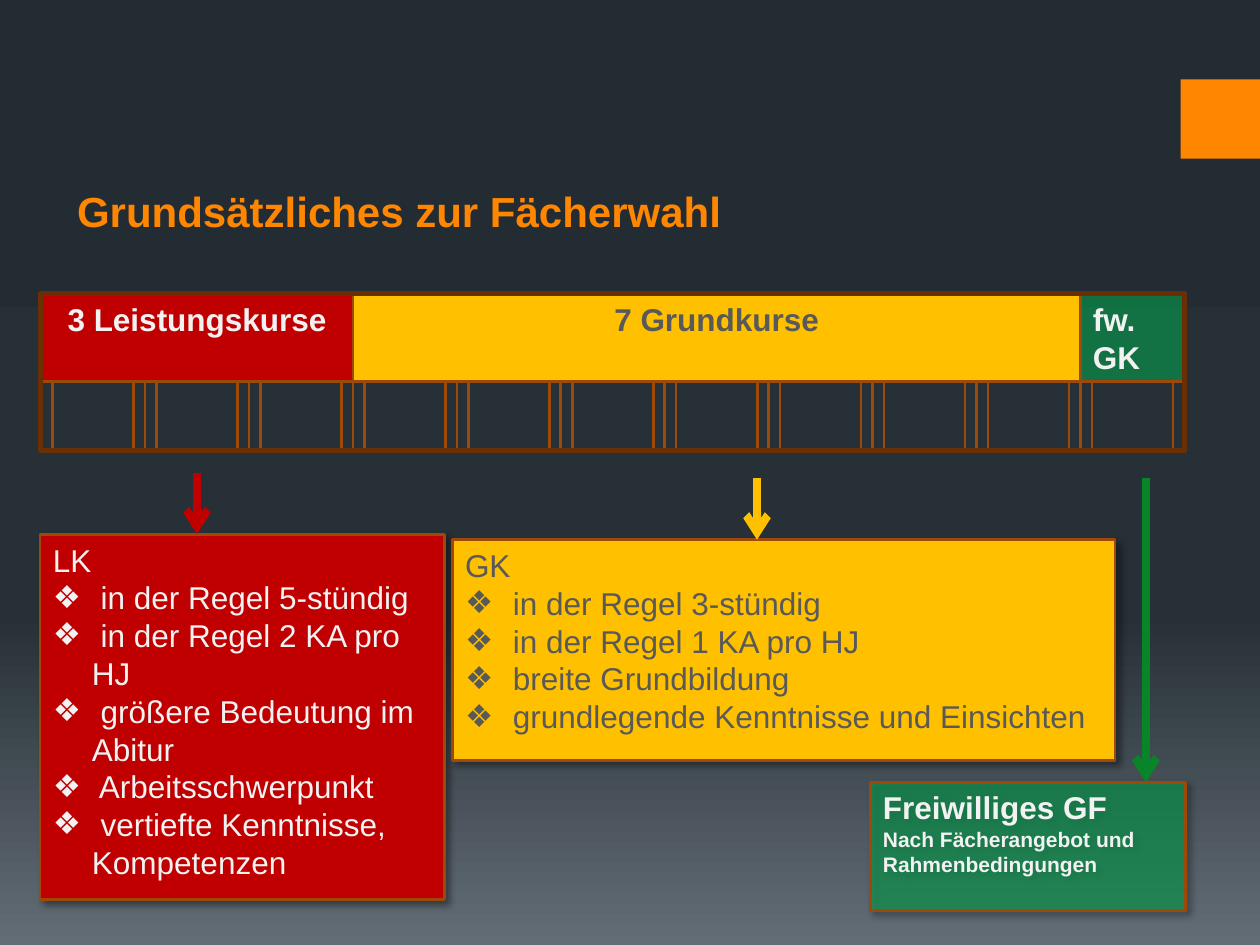
"""Build the slide on the basic rules of choosing school subjects."""
from copy import deepcopy
from dataclasses import dataclass

from lxml import etree
from pptx import Presentation
from pptx.dml.color import RGBColor
from pptx.enum.shapes import MSO_CONNECTOR, MSO_SHAPE
from pptx.enum.text import MSO_ANCHOR, MSO_AUTO_SIZE, PP_ALIGN
from pptx.oxml.ns import qn
from pptx.util import Cm, Pt

RECTANGLE = MSO_SHAPE.RECTANGLE
STRAIGHT = MSO_CONNECTOR.STRAIGHT
LEFT, CENTER = PP_ALIGN.LEFT, PP_ALIGN.CENTER
TOP, NO_AUTOFIT = MSO_ANCHOR.TOP, MSO_AUTO_SIZE.NONE

COLORS = {
    "accent": "FF8600", "border": "9D4909", "frame": "693006",
    "red": "C00000", "yellow": "FFC000", "green": "00B050",
    "green_arrow": "098529", "light": "F2F2F2", "dark": "595959",
}
BACKGROUND_STOPS = ((0, "242C33"), (0.65, "273037"), (1, "636D76"))
FONT = "Arial"
BULLET_INDENT = Cm(0.79)

GRID_LEFT, GRID_TOP = 0.83, 5.92
COLUMN_WIDTH, COLUMN_COUNT = 2.095, 11
HEADER_HEIGHT, CELL_HEIGHT, CELL_INSET = 1.77, 1.4, 0.23


@dataclass
class Box:
    left: float
    top: float
    width: float
    height: float


@dataclass
class Line:
    text: str
    size: float = 18
    bold: bool = False
    bullet: bool = False


@dataclass
class Band:
    label: str
    columns: int
    fill: str
    text_color: str
    alignment: PP_ALIGN = CENTER
    opacity: int = 100


@dataclass
class CourseList:
    box: Box
    fill: str
    text_color: str
    heading: str
    points: tuple


@dataclass
class Arrow:
    x: float
    top: float
    bottom: float
    color: str


BANDS = (
    Band("3 Leistungskurse", 3, "red", "light"),
    Band("7 Grundkurse", 7, "yellow", "dark"),
    Band("fw. GK", 1, "green", "light", LEFT, 52),
)
COURSE_LISTS = (
    CourseList(Box(0.81, 10.77, 8.15, 7.37), "red", "light", "LK", (
        " in der Regel 5-stündig", " in der Regel 2 KA pro HJ",
        " größere Bedeutung im Abitur", " Arbeitsschwerpunkt",
        " vertiefte Kenntnisse, Kompetenzen")),
    CourseList(Box(9.12, 10.88, 13.36, 4.45), "yellow", "dark", "GK", (
        " in der Regel 3-stündig", " in der Regel 1 KA pro HJ",
        " breite Grundbildung", " grundlegende Kenntnisse und Einsichten")),
)
ARROWS = (
    Arrow(3.97, 9.53, 10.77, "red"),
    Arrow(15.26, 9.63, 10.88, "yellow"),
    Arrow(23.1, 9.63, 15.77, "green_arrow"),
)


def rgb(name: str) -> RGBColor:
    return RGBColor.from_string(COLORS[name])


def place(shape, box: Box) -> None:
    shape.left, shape.top = Cm(box.left), Cm(box.top)
    shape.width, shape.height = Cm(box.width), Cm(box.height)


def style(shape, fill=None, border=None, border_width=1.5, opacity=100) -> None:
    if fill:
        shape.fill.solid()
        shape.fill.fore_color.rgb = rgb(fill)
        if opacity < 100:
            color = shape.element.spPr.find(".//" + qn("a:srgbClr"))
            etree.SubElement(color, qn("a:alpha"), val=str(opacity * 1000))
    else:
        shape.fill.background()
    if border:
        shape.line.color.rgb = rgb(border)
        shape.line.width = Pt(border_width)
    else:
        shape.line.fill.background()
    shape.shadow.inherit = False


def add_rectangle(slide, box: Box, **look):
    shape = slide.shapes.add_shape(
        RECTANGLE, Cm(box.left), Cm(box.top), Cm(box.width), Cm(box.height))
    style(shape, **look)
    return shape


def add_drop_shadow(shape) -> None:
    effects = shape.element.spPr.find(qn("a:effectLst"))
    shadow = etree.SubElement(
        effects, qn("a:outerShdw"), blurRad=str(Pt(4)), dist=str(Pt(3)),
        dir="2700000", algn="tl", rotWithShape="0")
    color = etree.SubElement(shadow, qn("a:srgbClr"), val="000000")
    etree.SubElement(color, qn("a:alpha"), val="40000")


def write(shape, lines, color: str, alignment=LEFT, wrap=True) -> None:
    frame = shape.text_frame
    frame.word_wrap = wrap
    frame.auto_size = NO_AUTOFIT
    frame.vertical_anchor = TOP
    for index, line in enumerate(lines):
        paragraph = frame.paragraphs[0] if index == 0 else frame.add_paragraph()
        properties = paragraph._p.get_or_add_pPr()
        indent = BULLET_INDENT if line.bullet else 0
        properties.set("marL", str(indent))
        properties.set("indent", str(-indent))
        if line.bullet:
            etree.SubElement(properties, qn("a:buFont"), typeface=FONT)
            etree.SubElement(properties, qn("a:buChar"), char="❖")
        else:
            etree.SubElement(properties, qn("a:buNone"))
        paragraph.alignment = alignment
        paragraph.line_spacing = 1.0
        paragraph.space_before = Pt(0)
        run = paragraph.add_run()
        run.text = line.text
        run.font.name, run.font.size = FONT, Pt(line.size)
        run.font.bold = line.bold
        run.font.color.rgb = rgb(color)


def paint_background(slide) -> None:
    fill = slide.background.fill
    fill.gradient()
    fill.gradient_angle = 270
    stop_list = slide.element.find(".//" + qn("a:gsLst"))
    stop_list.append(deepcopy(stop_list[-1]))
    for stop, (position, color) in zip(fill.gradient_stops, BACKGROUND_STOPS):
        stop.position = position
        stop.color.rgb = RGBColor.from_string(color)


def add_header(slide) -> None:
    add_rectangle(slide, Box(23.8, 1.6, 1.6, 1.6), fill="accent")
    title = slide.shapes.title
    place(title, Box(1.3, 3.61, 13.61, 1.27))
    write(title, (Line("Grundsätzliches zur Fächerwahl", 24, True),),
          "accent", wrap=False)


def add_course_grid(slide) -> None:
    left = GRID_LEFT
    for band in BANDS:
        width = band.columns * COLUMN_WIDTH
        shape = add_rectangle(slide, Box(left, GRID_TOP, width, HEADER_HEIGHT),
                              fill=band.fill, border="border", opacity=band.opacity)
        write(shape, (Line(band.label, bold=True),), band.text_color, band.alignment)
        left += width
    cell_top = GRID_TOP + HEADER_HEIGHT
    for column in range(COLUMN_COUNT):
        for inset in (CELL_INSET, 0):
            add_rectangle(slide, Box(GRID_LEFT + column * COLUMN_WIDTH + inset, cell_top,
                                     COLUMN_WIDTH - 2 * inset, CELL_HEIGHT),
                          border="border")
    add_rectangle(slide, Box(GRID_LEFT - 0.02, GRID_TOP, COLUMN_COUNT * COLUMN_WIDTH + 0.02,
                             HEADER_HEIGHT + CELL_HEIGHT), border="frame", border_width=3)


def fill_course_list(shape, course: CourseList) -> None:
    place(shape, course.box)
    style(shape, fill=course.fill, border="border")
    add_drop_shadow(shape)
    points = [Line(point, bullet=True) for point in course.points]
    write(shape, [Line(course.heading), *points], course.text_color)


def add_voluntary_box(slide) -> None:
    shape = add_rectangle(slide, Box(17.55, 15.77, 6.35, 2.59),
                          fill="green", border="border", opacity=52)
    add_drop_shadow(shape)
    write(shape, (Line("Freiwilliges GF", bold=True),
                  Line("Nach Fächerangebot und Rahmenbedingungen", 12, True)), "light")


def add_arrow(slide, arrow: Arrow) -> None:
    connector = slide.shapes.add_connector(
        STRAIGHT, Cm(arrow.x), Cm(arrow.top), Cm(arrow.x), Cm(arrow.bottom))
    connector.line.color.rgb = rgb(arrow.color)
    connector.line.width = Pt(4.5)
    properties = connector.element.spPr
    etree.SubElement(properties.find(qn("a:ln")), qn("a:tailEnd"), type="arrow")
    etree.SubElement(properties, qn("a:effectLst"))


def main() -> None:
    presentation = Presentation()
    presentation.slide_width, presentation.slide_height = Cm(25.4), Cm(19.05)
    slide = presentation.slides.add_slide(presentation.slide_layouts[3])
    paint_background(slide)
    add_header(slide)
    add_course_grid(slide)
    for index, course in enumerate(COURSE_LISTS, start=1):
        fill_course_list(slide.placeholders[index], course)
    add_voluntary_box(slide)
    for arrow in ARROWS:
        add_arrow(slide, arrow)
    presentation.save("out.pptx")


if __name__ == "__main__":
    main()
